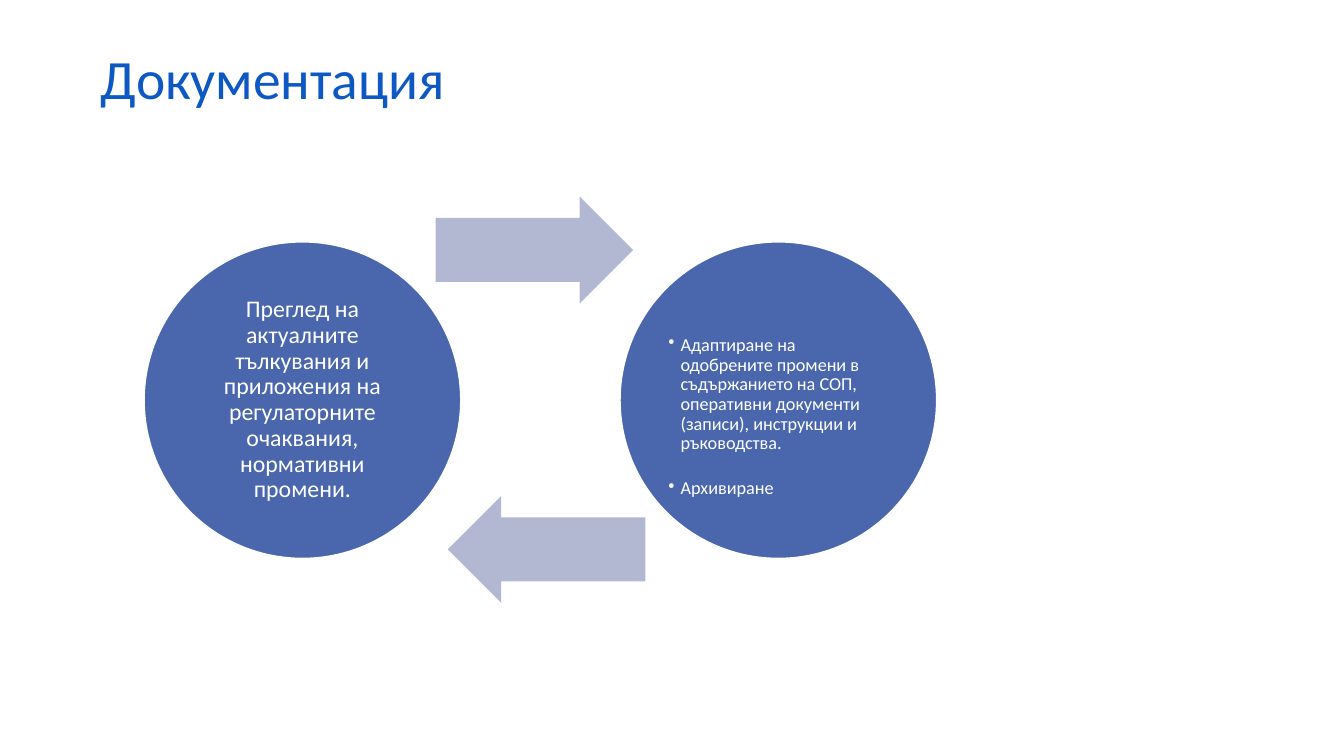
"""Build the documentation cycle slide."""
from dataclasses import dataclass

from lxml import etree
from pptx import Presentation
from pptx.dml.color import RGBColor
from pptx.enum.shapes import MSO_SHAPE
from pptx.enum.text import MSO_ANCHOR, PP_ALIGN
from pptx.oxml.ns import qn
from pptx.util import Inches, Pt

ELLIPSE = MSO_SHAPE.OVAL
RIGHT_ARROW = MSO_SHAPE.RIGHT_ARROW
MIDDLE = MSO_ANCHOR.MIDDLE
LEFT = PP_ALIGN.LEFT
CENTER = PP_ALIGN.CENTER
TITLE_ONLY = 5


@dataclass(frozen=True)
class Theme:
    """Hold the colours, font and type sizes."""
    font: str = "Calibri"
    title: RGBColor = RGBColor(0x0E, 0x58, 0xC4)
    circle: RGBColor = RGBColor(0x4A, 0x66, 0xAC)
    arrow: RGBColor = RGBColor(0xB2, 0xB8, 0xD2)
    white: RGBColor = RGBColor(0xFF, 0xFF, 0xFF)
    title_size: float = 39.6
    statement_size: float = 17
    bullet_size: float = 13
    line_spacing: float = 0.9


class SlideBuilder:
    """Draw styled elements on the current slide."""

    def __init__(self, slide, theme):
        """Keep the slide and its theme."""
        self.slide = slide
        self.theme = theme

    def add_text(self, paragraph, text, size, color, alignment=LEFT):
        """Add one styled run to a paragraph."""
        paragraph.alignment = alignment
        paragraph.line_spacing = self.theme.line_spacing
        run = paragraph.add_run()
        run.text = text
        run.font.name = self.theme.font
        run.font.size = Pt(size)
        run.font.color.rgb = color

    def title(self, text, left, top, width, height):
        """Place and fill the title placeholder."""
        shape = self.slide.shapes.title
        shape.left, shape.top = Inches(left), Inches(top)
        shape.width, shape.height = Inches(width), Inches(height)
        shape.text_frame.vertical_anchor = MIDDLE
        self.add_text(shape.text_frame.paragraphs[0], text, self.theme.title_size, self.theme.title)

    def preset(self, kind, left, top, width, height, color):
        """Add a flat filled shape."""
        shape = self.slide.shapes.add_shape(
            kind, Inches(left), Inches(top), Inches(width), Inches(height))
        shape.shadow.inherit = False
        shape.fill.solid()
        shape.fill.fore_color.rgb = color
        shape.line.fill.background()
        return shape

    def circle(self, left, top, diameter, top_inset=0.02):
        """Add an outlined circle and return its text frame."""
        shape = self.preset(ELLIPSE, left, top, diameter, diameter, self.theme.circle)
        shape.line.color.rgb = self.theme.white
        shape.line.width = Pt(1)
        frame = shape.text_frame
        frame.word_wrap = True
        frame.vertical_anchor = MIDDLE
        frame.margin_left = frame.margin_right = frame.margin_bottom = Inches(0.02)
        frame.margin_top = Inches(top_inset)
        return frame

    def statement(self, frame, text):
        """Fill a frame with a centred statement."""
        self.add_text(frame.paragraphs[0], text, self.theme.statement_size, self.theme.white, CENTER)

    def bullets(self, frame, items, gap):
        """Fill a frame with a bulleted list, with a gap between items."""
        for index, item in enumerate(items):
            paragraph = frame.add_paragraph() if index else frame.paragraphs[0]
            self.add_text(paragraph, item, self.theme.bullet_size, self.theme.white)
            if index:
                paragraph.space_before = Pt(gap)
            properties = paragraph._p.get_or_add_pPr()
            properties.set("marL", str(Inches(0.12)))
            properties.set("indent", str(Inches(-0.12)))
            etree.SubElement(properties, qn("a:buChar")).set("char", "•")

    def arrow(self, left, top, rotation=0):
        """Add a block arrow."""
        shape = self.preset(RIGHT_ARROW, left, top, 1.96, 1.06, self.theme.arrow)
        shape.adjustments[0] = 0.6
        shape.adjustments[1] = 0.5
        shape.rotation = rotation


def main():
    """Create and save the presentation."""
    presentation = Presentation()
    presentation.slide_width = Inches(13.33)
    presentation.slide_height = Inches(7.5)
    slide = presentation.slides.add_slide(presentation.slide_layouts[TITLE_ONLY])
    builder = SlideBuilder(slide, Theme())

    builder.title("Документация", 0.9, 0.4, 11.52, 0.81)

    circle_top, diameter = 2.4, 3.14
    review = builder.circle(1.43, circle_top, diameter)
    builder.statement(
        review,
        "Преглед на актуалните тълкувания и приложения на регулаторните "
        "очаквания, нормативни промени.")
    builder.arrow(4.32, 1.95)

    adaptation = builder.circle(6.15, circle_top, diameter, top_inset=0.36)
    builder.bullets(adaptation, [
        "Адаптиране на одобрените промени в съдържанието на СОП, оперативни "
        "документи (записи), инструкции и ръководства.",
        "Архивиране",
    ], gap=18)
    builder.arrow(4.44, 4.92, rotation=180)

    presentation.save("out.pptx")


if __name__ == "__main__":
    main()
